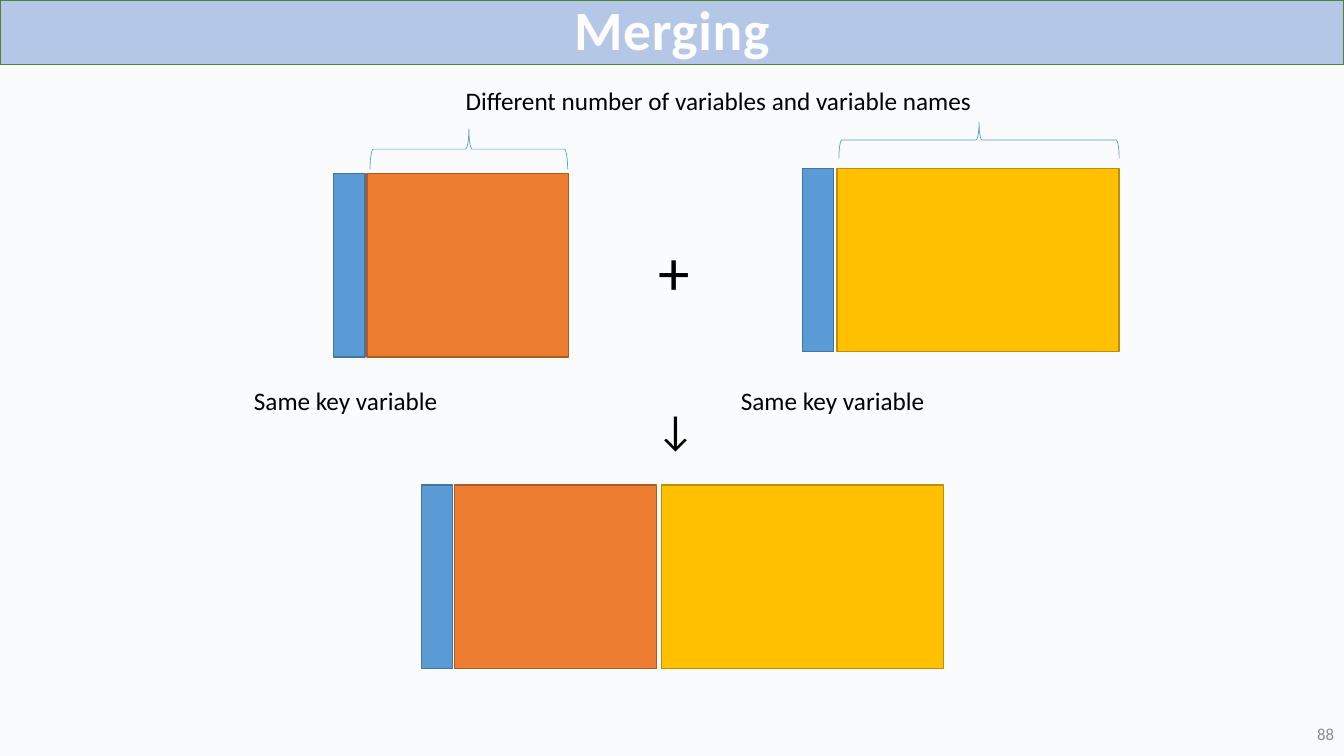
from pptx import Presentation
from pptx import util as u
from pptx.dml.color import RGBColor
from pptx.enum import shapes, text

PX = 9144  # 100 px to the inch


def add_box(parent, kind, place, line, weight, fill=None):
    box = parent.add_shape(kind, *[value * PX for value in place])
    box.shadow.inherit = False
    if fill:
        box.fill.solid()
        box.fill.fore_color.rgb = RGBColor.from_string(fill)
    else:
        box.fill.background()
    box.line.color.rgb = RGBColor.from_string(line)
    box.line.width = u.Pt(weight)
    return box


def write(box, words, size, color="000000", align=text.PP_ALIGN.LEFT):
    box.text_frame.text = words
    para = box.text_frame.paragraphs[0]
    para.alignment = align
    span = para.runs[0]
    span.font.name = "Calibri"
    span.font.size = u.Pt(size)
    span.font.color.rgb = RGBColor.from_string(color)
    return para


deck = Presentation()
deck.slide_width, deck.slide_height = 1333 * PX, 750 * PX
page = deck.slides.add_slide(deck.slide_layouts[6])
page.background.fill.solid()
page.background.fill.fore_color.rgb = RGBColor.from_string("FAFBFD")

# Title bar
title = add_box(page.shapes, shapes.MSO_SHAPE.RECTANGLE, (0, 0, 1333, 64), "548235", 1, "B4C7E7")
title.text_frame.vertical_anchor = text.MSO_ANCHOR.MIDDLE
heading = write(title, "Merging", 39.6, "FEFEFE", text.PP_ALIGN.CENTER)
heading.line_spacing = 0.9
heading.runs[0].font.bold = True
heading.runs[0].font._element.set("spc", "50")

# Page number
number = page.shapes.add_textbox(1217 * PX, 707 * PX, 116 * PX, 43 * PX)
number.text_frame.word_wrap = True
number.text_frame.vertical_anchor = text.MSO_ANCHOR.MIDDLE
write(number, "88", 12, "8C8C8C", text.PP_ALIGN.RIGHT)

# Labels and operators: words, place, size, wrap, rotation
labels = [
    ("+", (643, 226, 73, 86), 45, True, 0),
    ("→", (637, 408, 73, 61), 30, True, 90),
    ("Different number of variables and variable names", (452, 80, 528, 40), 18, False, 0),
    ("Same key variable", (242, 377, 204, 40), 18, False, 0),
    ("Same key variable", (725, 377, 204, 40), 18, False, 0),
]
for words, place, size, wrap, rotation in labels:
    label = page.shapes.add_textbox(*[value * PX for value in place])
    label.rotation = rotation
    label.text_frame.word_wrap = wrap
    label.text_frame.auto_size = text.MSO_AUTO_SIZE.SHAPE_TO_FIT_TEXT
    write(label, words, size)

# Braces over the variables that differ
for place in [(445, 50, 40, 196), (953, 0, 36, 278)]:
    brace = add_box(page.shapes, shapes.MSO_SHAPE.LEFT_BRACE, place, "5B9BD5", 0.5)
    brace.rotation = 90

# Data sets: column blocks side by side, each as (width, fill, line)
key = (31, "5B9BD5", "43739E")
first = (200, "ED7D31", "AF5C24")
second = (280, "FFC000", "BD8E00")
data_sets = [
    (172, [(331, key), (364, first)]),
    (167, [(796, key), (830, second)]),
    (481, [(418, key), (451, first), (656, second)]),
]
for top, blocks in data_sets:
    group = page.shapes.add_group_shape()
    for left, (width, fill, line) in blocks:
        add_box(group.shapes, shapes.MSO_SHAPE.RECTANGLE, (left, top, width, 182), line, 1, fill)

deck.save("out.pptx")
